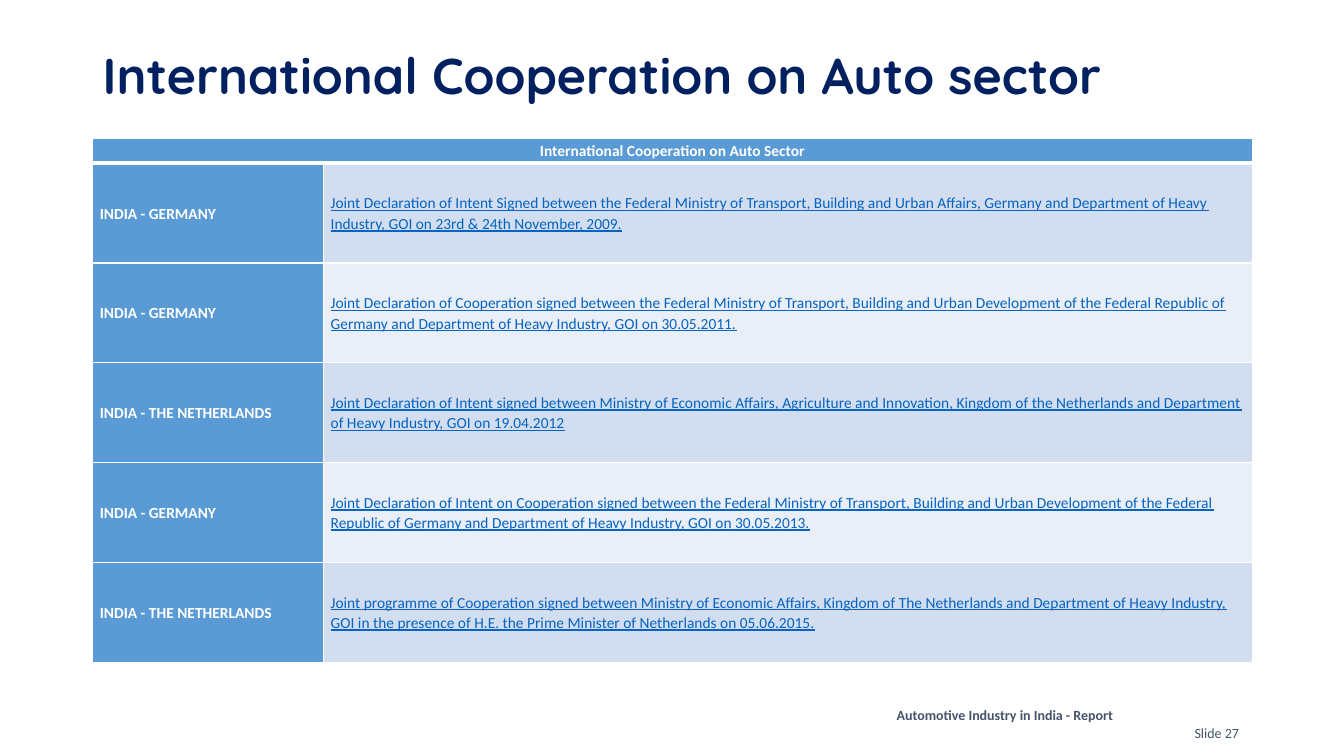
from dataclasses import dataclass

from lxml.etree import SubElement
from pptx import Presentation
from pptx.dml.color import RGBColor
from pptx.enum.text import MSO_ANCHOR as Anchor, MSO_AUTO_SIZE as AutoSize, PP_ALIGN as Align
from pptx.oxml.ns import qn
from pptx.util import Inches, Pt

COLORS = {
    "navy": "002060", "slate": "44546A", "white": "FFFFFF", "blue": "5B9BD5",
    "link": "0563C1", "band_dark": "D2DEEF", "band_light": "EAEFF7",
}
BORDER_SIDES = ("L", "R", "T", "B")


@dataclass
class TextStyle:
    size: float
    color: str
    bold: bool = False
    underline: bool = False
    font: str = "Calibri"
    align: Align = Align.LEFT
    line_spacing: float = 1.0


@dataclass
class Label:
    text: str
    left: float
    top: float
    width: float
    height: float
    style: TextStyle
    wrap: bool = True
    anchor: Anchor = Anchor.TOP
    auto_size: AutoSize = AutoSize.SHAPE_TO_FIT_TEXT


@dataclass
class Agreement:
    parties: str
    description: str


HEADER_STYLE = TextStyle(11, "white", bold=True, align=Align.CENTER, line_spacing=1.07)
PARTIES_STYLE = TextStyle(11, "white", bold=True, line_spacing=1.07)
LINK_STYLE = TextStyle(11, "link", underline=True, line_spacing=1.07)

LABELS = [
    Label("Automotive Industry in India - Report", 7.84, 6.96, 4.25, 0.27,
          TextStyle(10, "slate", bold=True, align=Align.CENTER)),
    Label("Slide 27", 11.75, 7.14, 0.66, 0.27, TextStyle(10, "slate"), wrap=False),
    Label("International Cooperation on Auto sector", 0.92, 0.4, 11.5, 0.75,
          TextStyle(36, "navy", bold=True, font="Quicksand", line_spacing=0.9),
          anchor=Anchor.MIDDLE, auto_size=AutoSize.NONE),
]

AGREEMENTS = [
    Agreement("INDIA - GERMANY",
              "Joint Declaration of Intent Signed between the Federal Ministry of Transport, "
              "Building and Urban Affairs, Germany and Department of Heavy Industry, GOI on "
              "23rd & 24th November, 2009."),
    Agreement("INDIA - GERMANY",
              "Joint Declaration of Cooperation signed between the Federal Ministry of Transport, "
              "Building and Urban Development of the Federal Republic of Germany and Department "
              "of Heavy Industry, GOI on 30.05.2011."),
    Agreement("INDIA - THE NETHERLANDS",
              "Joint Declaration of Intent signed between Ministry of Economic Affairs, "
              "Agriculture and Innovation, Kingdom of the Netherlands and Department of Heavy "
              "Industry, GOI on 19.04.2012"),
    Agreement("INDIA - GERMANY",
              "Joint Declaration of Intent on Cooperation signed between the Federal Ministry of "
              "Transport, Building and Urban Development of the Federal Republic of Germany and "
              "Department of Heavy Industry, GOI on 30.05.2013."),
    Agreement("INDIA - THE NETHERLANDS",
              "Joint programme of Cooperation signed between Ministry of Economic Affairs, Kingdom "
              "of The Netherlands and Department of Heavy Industry, GOI in the presence of H.E. "
              "the Prime Minister of Netherlands on 05.06.2015."),
]


def write_text(text_frame, text: str, style: TextStyle) -> None:
    paragraph = text_frame.paragraphs[0]
    paragraph.alignment = style.align
    paragraph.line_spacing = style.line_spacing
    run = paragraph.add_run()
    run.text = text
    run.font.name = style.font
    run.font.size = Pt(style.size)
    run.font.bold = style.bold
    run.font.underline = style.underline
    run.font.color.rgb = RGBColor.from_string(COLORS[style.color])


def add_label(slide, label: Label) -> None:
    shape = slide.shapes.add_textbox(Inches(label.left), Inches(label.top),
                                     Inches(label.width), Inches(label.height))
    text_frame = shape.text_frame
    text_frame.word_wrap = label.wrap
    text_frame.auto_size = label.auto_size
    text_frame.vertical_anchor = label.anchor
    write_text(text_frame, label.text, label.style)


def format_cell(cell, fill: str, bottom_width: float = 1, top_width: float = 1) -> None:
    cell.margin_left = cell.margin_right = Inches(0.07)
    cell.margin_top = cell.margin_bottom = 0
    cell.vertical_anchor = Anchor.MIDDLE
    # Borders come before the fill in the cell properties
    properties = cell._tc.get_or_add_tcPr()
    widths = {"B": bottom_width, "T": top_width}
    for side in BORDER_SIDES:
        line = SubElement(properties, qn(f"a:ln{side}"), w=str(Pt(widths.get(side, 1))))
        line_fill = SubElement(line, qn("a:solidFill"))
        SubElement(line_fill, qn("a:srgbClr"), val=COLORS["white"])
    cell.fill.solid()
    cell.fill.fore_color.rgb = RGBColor.from_string(COLORS[fill])


def add_agreement_table(slide, agreements: list[Agreement]) -> None:
    shape = slide.shapes.add_table(len(agreements) + 1, 2, Inches(0.92), Inches(1.37),
                                   Inches(11.5), Inches(5.2))
    table = shape.table
    for column, width in zip(table.columns, (2.29, 9.21)):
        column.width = Inches(width)
    for index, row in enumerate(table.rows):
        row.height = Inches(0.99 if index else 0.25)

    # Header across both columns
    header = table.cell(0, 0)
    header.merge(table.cell(0, 1))
    for column in range(2):
        format_cell(table.cell(0, column), "blue", bottom_width=3)
    write_text(header.text_frame, "International Cooperation on Auto Sector", HEADER_STYLE)

    # Banded agreement rows
    for index, agreement in enumerate(agreements, start=1):
        band = "band_dark" if index % 2 else "band_light"
        parties, description = table.cell(index, 0), table.cell(index, 1)
        for cell, fill in ((parties, "blue"), (description, band)):
            format_cell(cell, fill, top_width=3 if index == 1 else 1)
        write_text(parties.text_frame, agreement.parties, PARTIES_STYLE)
        write_text(description.text_frame, agreement.description, LINK_STYLE)


def main() -> None:
    presentation = Presentation()
    presentation.slide_width = Inches(13.33)
    presentation.slide_height = Inches(7.5)
    slide = presentation.slides.add_slide(presentation.slide_layouts[6])

    # Footer and title
    for label in LABELS:
        add_label(slide, label)

    # Agreements
    add_agreement_table(slide, AGREEMENTS)
    presentation.save("out.pptx")


if __name__ == "__main__":
    main()
